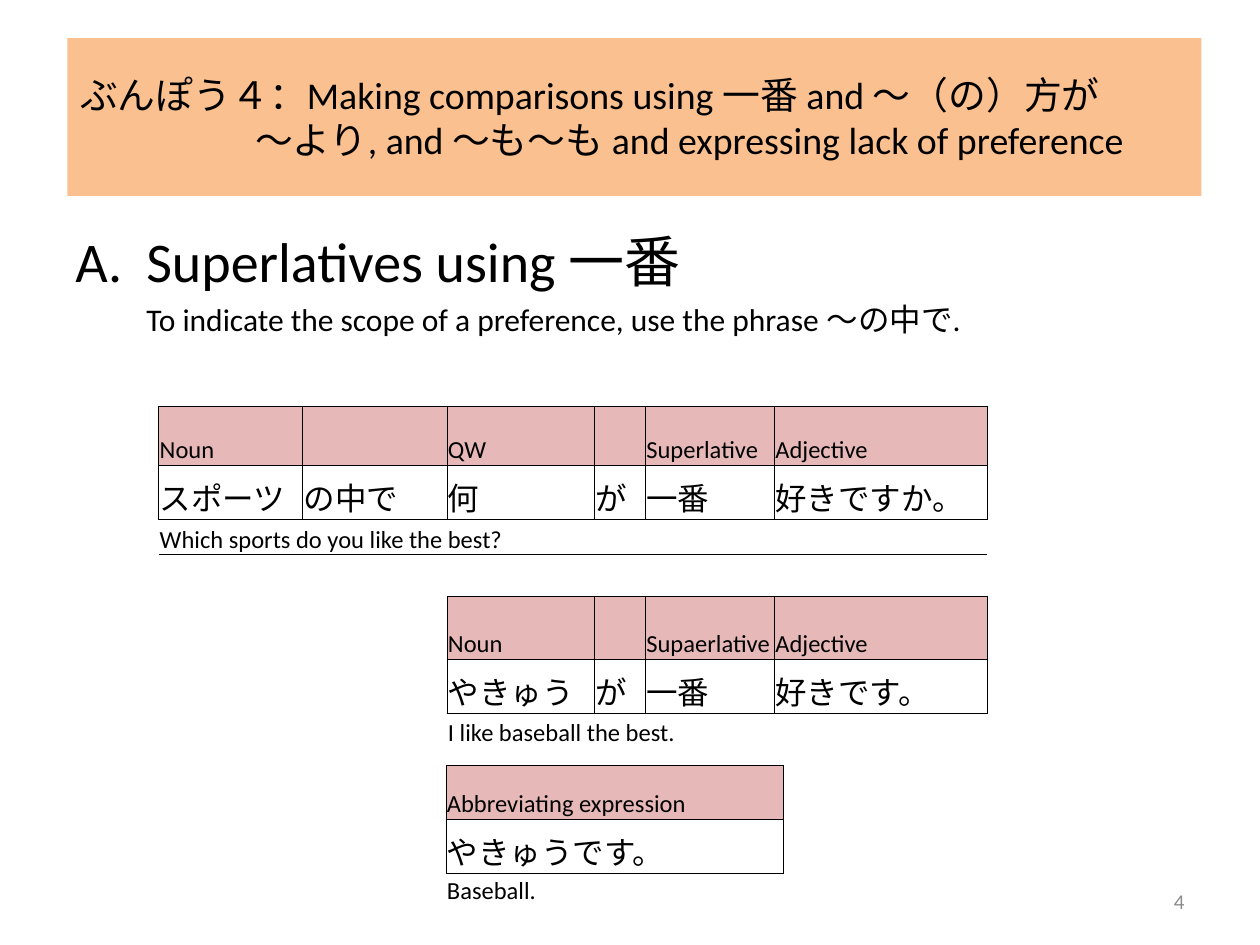
from lxml.etree import SubElement
from pptx import Presentation
from pptx.dml.color import RGBColor
from pptx.enum.text import MSO_ANCHOR, MSO_AUTO_SIZE, PP_ALIGN
from pptx.oxml.ns import qn
from pptx.util import Cm, Pt

FONT = "Calibri"
COLORS = {"text": "000000", "banner": "FAC090", "header": "E6B9B8", "number": "8C8C8C"}
NO_STYLE = "{2D5ABB26-0587-4C30-8999-92F81FD0307C}"
EDGES = {"a:lnL": (0, -1), "a:lnR": (0, 1), "a:lnT": (-1, 0), "a:lnB": (1, 0)}

TITLE = [
    ("ぶんぽう４：Making comparisons using 一番 and ～（の）方が", 0),
    ("～より, and ～も～も and expressing lack of preference", 3.53),
]
BODY = [
    ("Superlatives using 一番", 32),
    ("To indicate the scope of a preference, use the phrase ～の中で.", 18),
]
# Each row: kind, height in cm, first column used, texts
TABLES = [
    {"left": 3.2, "top": 8.19, "cols": [2.9, 2.91, 2.97, 1.03, 2.6, 4.29], "rows": [
        ("header", 1.19, 0, ["Noun", "", "QW", "", "Superlative", "Adjective"]),
        ("example", 1.09, 0, ["スポーツ", "の中で", "何", "が", "一番", "好きですか。"]),
        ("caption", 0.71, 0, ["Which sports do you like the best?"]),
        ("gap", 0.84, 0, []),
        ("header", 1.27, 2, ["Noun", "", "Supaerlative", "Adjective"]),
        ("example", 1.09, 2, ["やきゅう", "が", "一番", "好きです。"]),
        ("caption", 0.69, 2, ["I like baseball the best."]),
    ], "merges": [(2, 0, 3), (6, 2, 4)]},
    {"left": 8.99, "top": 15.43, "cols": [6.81], "rows": [
        ("header", 1.09, 0, ["Abbreviating expression"]),
        ("example", 1.08, 0, ["やきゅうです。"]),
        ("caption", 0.66, 0, ["Baseball."]),
    ], "merges": []},
]


def rgb(name):
    return RGBColor.from_string(COLORS[name])


def write(p, text, size, color="text"):
    p.text = text
    for r in p.runs:
        r.font.name = FONT
        r.font.size = Pt(size)
        r.font.color.rgb = rgb(color)


def indent(p, left, first=0):
    pPr = p._p.get_or_add_pPr()
    pPr.set("marL", str(Cm(left)))
    pPr.set("indent", str(Cm(first)))
    return pPr


def add_paragraph(tf, i):
    return tf.add_paragraph() if i else tf.paragraphs[0]


def add_border(cell, tag):
    ln = SubElement(cell._tc.get_or_add_tcPr(), qn(tag), w=str(Pt(0.5)))
    fill = SubElement(ln, qn("a:solidFill"))
    SubElement(fill, qn("a:srgbClr"), val=COLORS["text"])


def add_grammar_table(slide, spec):
    rows, cols = spec["rows"], spec["cols"]
    frame = slide.shapes.add_table(
        len(rows), len(cols), Cm(spec["left"]), Cm(spec["top"]),
        Cm(sum(cols)), Cm(sum(row[1] for row in rows)))
    table = frame.table
    table.first_row = table.horz_banding = False
    table._tbl.tblPr.find(qn("a:tableStyleId")).text = NO_STYLE
    for col, width in zip(table.columns, cols):
        col.width = Cm(width)

    boxed = {(i, start + j) for i, (kind, _, start, texts) in enumerate(rows)
             if kind in ("header", "example") for j in range(len(texts))}
    for i, (kind, height, start, texts) in enumerate(rows):
        table.rows[i].height = Cm(height)
        size = 18 if kind == "example" else 14
        for j in range(len(cols)):
            cell = table.cell(i, j)
            cell.margin_left = cell.margin_right = cell.margin_top = Cm(0.02)
            cell.margin_bottom = 0
            cell.vertical_anchor = MSO_ANCHOR.BOTTOM
            for tag, (di, dj) in EDGES.items():
                if {(i, j), (i + di, j + dj)} & boxed:
                    add_border(cell, tag)
            if kind == "header" and (i, j) in boxed:
                cell.fill.solid()
                cell.fill.fore_color.rgb = rgb("header")
            else:
                cell.fill.background()
            p = cell.text_frame.paragraphs[0]
            text = texts[j - start] if 0 <= j - start < len(texts) else ""
            if text:
                write(p, text, size)
            else:
                p._p.get_or_add_endParaRPr().set("sz", str(size * 100))
    for i, first, last in spec["merges"]:
        table.cell(i, first).merge(table.cell(i, last))


prs = Presentation()
prs.slide_width, prs.slide_height = Cm(25.4), Cm(19.05)
slide = prs.slides.add_slide(prs.slide_layouts[5])

title = slide.shapes.title
title.left, title.top, title.width, title.height = Cm(1.36), Cm(0.77), Cm(22.86), Cm(3.18)
title.fill.solid()
title.fill.fore_color.rgb = rgb("banner")
tf = title.text_frame
tf.auto_size = MSO_AUTO_SIZE.NONE
tf.vertical_anchor = MSO_ANCHOR.MIDDLE
for i, (text, left) in enumerate(TITLE):
    p = add_paragraph(tf, i)
    write(p, text, 21.6)
    p.alignment = PP_ALIGN.LEFT
    p.space_before = Pt(0)
    indent(p, left)

body = slide.shapes.add_textbox(Cm(1.27), Cm(4.45), Cm(22.86), Cm(3.5))
tf = body.text_frame
tf.word_wrap = True
for i, (text, size) in enumerate(BODY):
    p = add_paragraph(tf, i)
    write(p, text, size)
    p.space_before = Pt(size * 0.2)
    pPr = indent(p, 1.43, 0 if i else -1.43)
    if i == 0:
        SubElement(pPr, qn("a:buFont"), typeface=FONT)
        SubElement(pPr, qn("a:buAutoNum"), type="alphaUcPeriod")

for spec in TABLES:
    add_grammar_table(slide, spec)

number = slide.shapes.add_textbox(Cm(18.2), Cm(17.66), Cm(5.93), Cm(1.01))
tf = number.text_frame
tf.word_wrap = True
tf.vertical_anchor = MSO_ANCHOR.MIDDLE
write(tf.paragraphs[0], "4", 12, "number")
tf.paragraphs[0].alignment = PP_ALIGN.RIGHT

prs.save("out.pptx")
